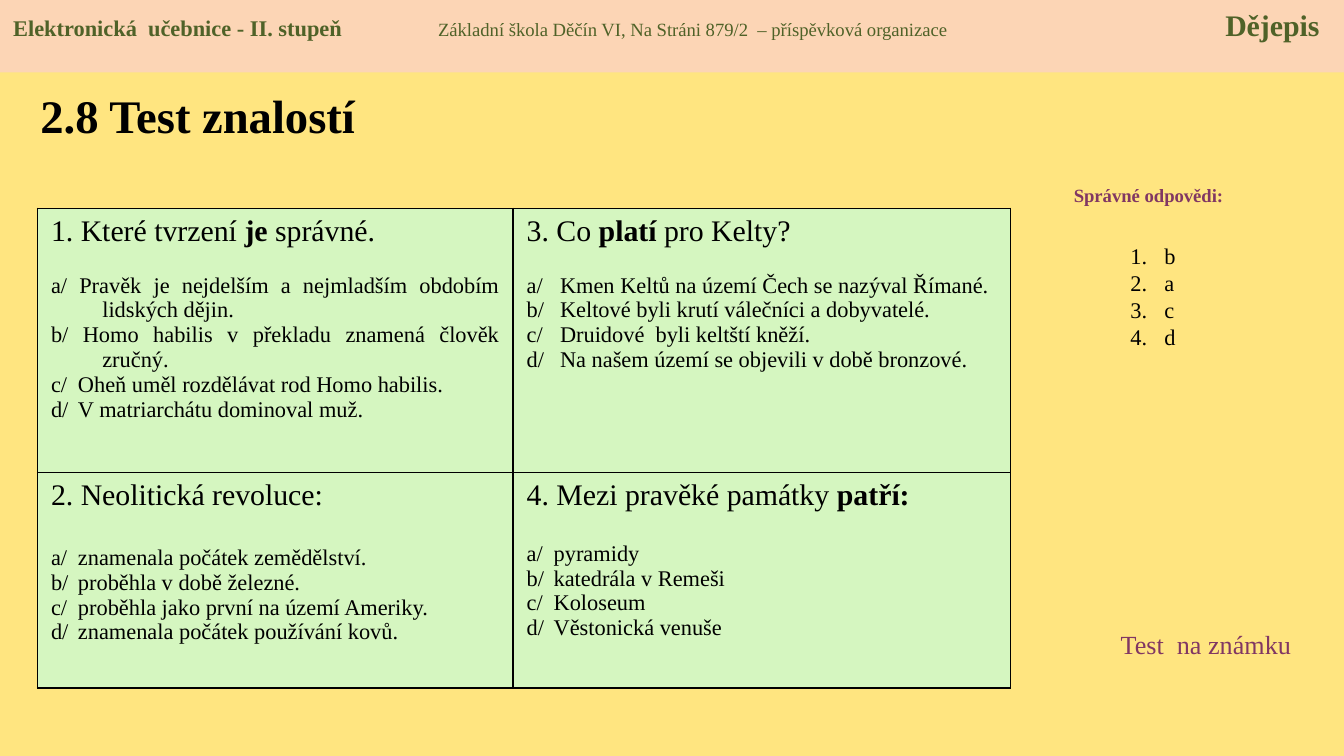
import pptx
import pptx.dml.color
import pptx.enum.shapes
import pptx.enum.text
import pptx.oxml.ns
import pptx.util
from lxml import etree

Cm = pptx.util.Cm
Pt = pptx.util.Pt
ALIGN = pptx.enum.text.PP_ALIGN
ANCHOR = pptx.enum.text.MSO_ANCHOR
FONT = "Times New Roman"
BLACK, PLUM, GREEN = "000000", "813763", "4F6228"
WRAPPED = 0.97

QUESTIONS = [
    [
        ([("1. Které tvrzení ", False), ("je", True), (" správné.", False)], 13.3, [
            ("a/ Pravěk je nejdelším a nejmladším obdobím lidských dějin.", WRAPPED),
            ("b/ Homo habilis v překladu znamená člověk zručný.", WRAPPED),
            ("c/\tOheň uměl rozdělávat rod Homo habilis.", 0.51),
            ("d/\tV matriarchátu dominoval muž.", 0.51),
        ]),
        ([("3. Co ", False), ("platí", True), (" pro Kelty?", False)], 13.3, [
            ("a/\tKmen Keltů na území Čech se nazýval Římané.", 0.63),
            ("b/\tKeltové byli krutí válečníci a dobyvatelé.", 0.63),
            ("c/\tDruidové  byli keltští kněží.", 0.63),
            ("d/\tNa našem území se objevili v době bronzové.", 0.63),
        ]),
    ],
    [
        ([("2. Neolitická revoluce:", False)], 17.7, [
            ("a/\tznamenala počátek zemědělství.", 0.51),
            ("b/\tproběhla v době železné.", 0.51),
            ("c/\tproběhla jako první na území Ameriky.", 0.51),
            ("d/\tznamenala počátek používání kovů.", 0.51),
        ]),
        ([("4. Mezi pravěké památky ", False), ("patří:", True)], 15.5, [
            ("a/\tpyramidy", 0.51),
            ("b/\tkatedrála v Remeši", 0.51),
            ("c/\tKoloseum", 0.51),
            ("d/\tVěstonická venuše", 0.51),
        ]),
    ],
]


def color(value):
    return pptx.dml.color.RGBColor.from_string(value)


def paint(fill, value):
    fill.solid()
    fill.fore_color.rgb = color(value)


def add_element(parent, tag, **attributes):
    return etree.SubElement(parent, pptx.oxml.ns.qn(tag), attributes)


def add_span(para, text, size, ink=BLACK, bold=False):
    span = para.add_run()
    span.text = text
    span.font.name = FONT
    span.font.size = Pt(size)
    span.font.bold = bold
    span.font.color.rgb = color(ink)


def hang(para, indent):
    properties = para._p.get_or_add_pPr()
    properties.set("marL", str(Cm(indent)))
    properties.set("indent", str(-Cm(indent)))
    return properties


def place(shape, left, top, width, height):
    shape.left, shape.top = Cm(left), Cm(top)
    shape.width, shape.height = Cm(width), Cm(height)


def set_title(page):
    title = page.shapes.title
    place(title, 0.51, 1.35, 8.71, 1.65)
    title.text_frame.vertical_anchor = ANCHOR.MIDDLE
    para = title.text_frame.paragraphs[0]
    para.alignment = ALIGN.LEFT
    add_span(para, "2.8 Test znalostí", 25, bold=True)


def add_label(page, area, text, size, bold, alignment):
    box = page.shapes.add_textbox(*(Cm(length) for length in area))
    box.text_frame.word_wrap = True
    para = box.text_frame.paragraphs[0]
    para.alignment = alignment
    add_span(para, text, size, PLUM, bold)


def set_answers(page, answers):
    box = page.placeholders[1]
    place(box, 21.11, 4.45, 1.4, 2.8)
    frame = box.text_frame
    frame.auto_size = pptx.enum.text.MSO_AUTO_SIZE.NONE
    for index, answer in enumerate(answers):
        para = frame.add_paragraph() if index else frame.paragraphs[0]
        para.space_before = Pt(0)
        para.line_spacing = Pt(14.5)
        properties = hang(para, 0.64)
        add_element(properties, "a:buFont", typeface=FONT)
        add_element(properties, "a:buAutoNum", type="arabicPeriod")
        add_span(para, answer, 12)


def add_borders(cell):
    properties = cell._tc.get_or_add_tcPr()
    for index, side in enumerate(("a:lnL", "a:lnR", "a:lnT", "a:lnB")):
        line = etree.Element(pptx.oxml.ns.qn(side), w=str(Pt(1)))
        fill = add_element(line, "a:solidFill")
        add_element(fill, "a:srgbClr", val=BLACK)
        properties.insert(index, line)


def fill_question(cell, question, alignment):
    heading, gap, options = question
    para = cell.text_frame.paragraphs[0]
    for text, bold in heading:
        add_span(para, text, 16, bold=bold)
    for index, (text, indent) in enumerate(options):
        para = cell.text_frame.add_paragraph()
        para.alignment = alignment
        para.space_before = Pt(0 if index else gap)
        hang(para, indent)
        add_span(para, text, 12)
    paint(cell.fill, "D5F6C0")
    add_borders(cell)


def add_questions(page):
    widths, heights = (8.99, 9.4), (4.99, 4.07)
    frame = page.shapes.add_table(2, 2, Cm(0.71), Cm(3.94), Cm(sum(widths)), Cm(sum(heights)))
    table = frame.table
    table.first_row = table.horz_banding = False
    for column, width in zip(table.columns, widths):
        column.width = Cm(width)
    alignments = (ALIGN.JUSTIFY, ALIGN.LEFT)
    for row, (height, questions) in enumerate(zip(heights, QUESTIONS)):
        table.rows[row].height = Cm(height)
        for column, question in enumerate(questions):
            fill_question(table.cell(row, column), question, alignments[row])


def add_band(page):
    band = page.shapes.add_shape(
        pptx.enum.shapes.MSO_SHAPE.RECTANGLE, 0, 0, Cm(25.4), Cm(1.37))
    band.shadow.inherit = False
    paint(band.fill, "FCD5B5")
    band.line.fill.background()
    band.text_frame.vertical_anchor = ANCHOR.TOP
    band.text_frame.word_wrap = True
    para = band.text_frame.paragraphs[0]
    para.alignment = ALIGN.LEFT
    tabs = add_element(para._p.get_or_add_pPr(), "a:tabLst")
    for position, side in ((8.03, "l"), (24.69, "r")):
        add_element(tabs, "a:tab", pos=str(Cm(position)), algn=side)
    add_span(para, "Elektronická  učebnice - II. stupeň\t", 12, GREEN, True)
    add_span(para, "Základní škola Děčín VI, Na Stráni 879/2  – příspěvková organizace\t", 10, GREEN)
    add_span(para, "Dějepis", 16, GREEN, True)


def main():
    deck = pptx.Presentation()
    deck.slide_width, deck.slide_height = Cm(25.4), Cm(14.29)
    page = deck.slides.add_slide(deck.slide_layouts[1])
    paint(page.background.fill, "FFE580")
    set_title(page)
    add_label(page, (19.71, 3.35, 3.99, 0.69), "Správné odpovědi:", 10, True, ALIGN.CENTER)
    add_questions(page)
    set_answers(page, "bacd")
    add_label(page, (20.93, 11.76, 3.99, 0.86), "Test  na známku", 14, False, ALIGN.LEFT)
    add_band(page)
    deck.save("out.pptx")


if __name__ == "__main__":
    main()
